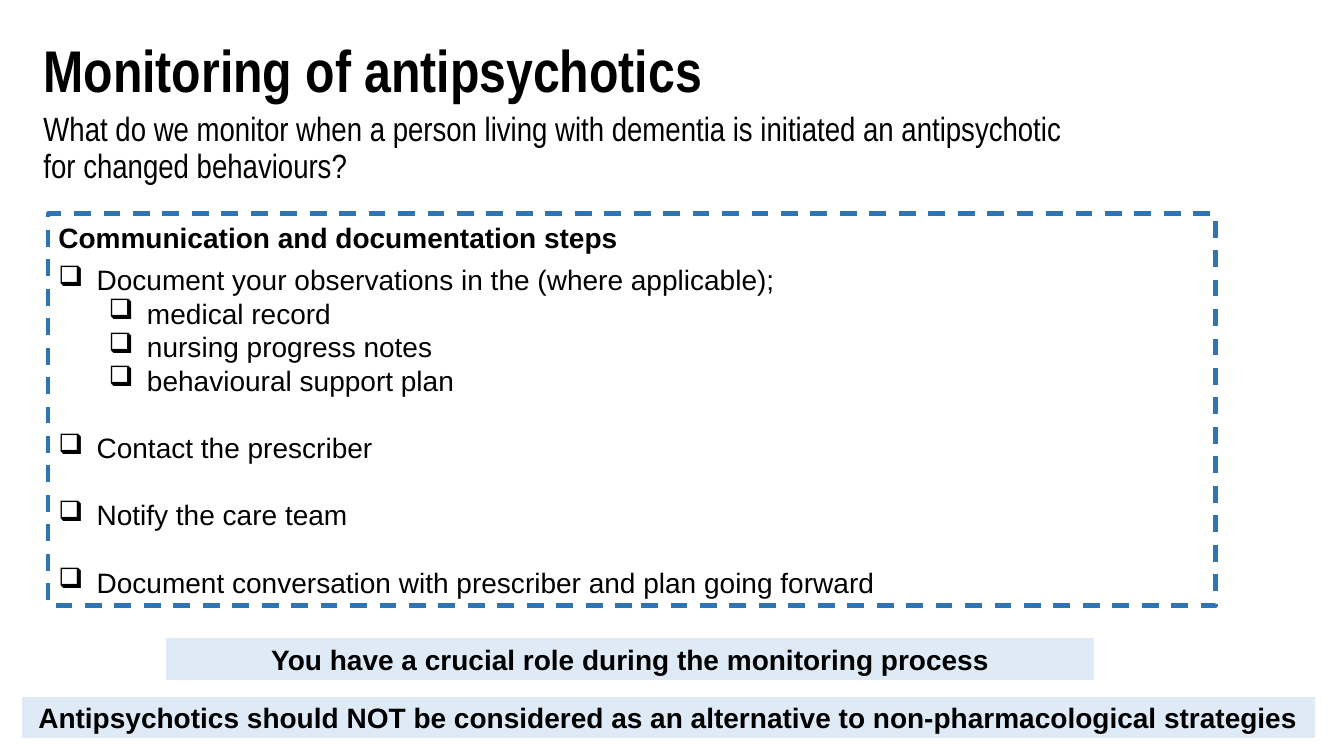
from lxml import etree
from pptx import Presentation
from pptx import util as u
from pptx.dml.color import RGBColor
from pptx.enum import dml, shapes, text
from pptx.oxml import ns

BLACK = RGBColor(0x00, 0x00, 0x00)
WHITE = RGBColor(0xFF, 0xFF, 0xFF)
BLUE = RGBColor(0x2E, 0x75, 0xB6)
PALE_BLUE = RGBColor(0xDE, 0xEB, 0xF7)

WIDTH, HEIGHT = u.Inches(13.33), u.Inches(7.5)
HEADING_FONT, BODY_FONT = "Arial Narrow", "Arial"
BODY_SIZE = 20
LINE_GAP = 24

STEPS = [
    ("Document your observations in the (where applicable);", 0, 6),
    ("medical record", 1, 0),
    ("nursing progress notes", 1, 0),
    ("behavioural support plan", 1, 0),
    ("Contact the prescriber", 0, LINE_GAP),
    ("Notify the care team", 0, LINE_GAP),
    ("Document conversation with prescriber and plan going forward", 0, LINE_GAP),
]


def area(left, top, width, height):
    return [int(share * side / 100) for share, side in
            zip((left, top, width, height), (WIDTH, HEIGHT, WIDTH, HEIGHT))]


def style(p, font, size, bold=False):
    for r in p.runs:
        r.font.name = font
        r.font.size = u.Pt(size)
        r.font.bold = bold
        r.font.color.rgb = BLACK


def add_bullet(p, level):
    p.level = level
    pPr = p._p.get_or_add_pPr()
    pPr.set("marL", str(u.Inches(0.38 + 0.5 * level)))
    pPr.set("indent", str(u.Inches(-0.38)))
    etree.SubElement(pPr, ns.qn("a:buChar"), char="❑")


def add_heading(s, place, words, size, bold=False):
    tf = s.shapes.add_textbox(*area(*place)).text_frame
    tf.word_wrap = True
    tf.text = words
    p = tf.paragraphs[0]
    p.line_spacing = 0.9
    style(p, HEADING_FONT, size, bold)


def add_box(s, place, words, line_color, line_width, align):
    sp = s.shapes.add_shape(shapes.MSO_SHAPE.RECTANGLE, *area(*place))
    sp.shadow.inherit = False
    sp.line.color.rgb = line_color
    sp.line.width = u.Pt(line_width)
    tf = sp.text_frame
    tf.word_wrap = True
    tf.vertical_anchor = text.MSO_ANCHOR.MIDDLE
    tf.text = words
    p = tf.paragraphs[0]
    p.alignment = align
    style(p, BODY_FONT, BODY_SIZE, True)
    return sp


def add_checklist(s, place, title, steps):
    sp = add_box(s, place, title, BLUE, 3, text.PP_ALIGN.LEFT)
    sp.fill.background()
    sp.line.dash_style = dml.MSO_LINE.DASH
    for words, level, gap in steps:
        p = sp.text_frame.add_paragraph()
        p.text = words
        p.alignment = text.PP_ALIGN.LEFT
        p.space_before = u.Pt(gap)
        add_bullet(p, level)
        style(p, BODY_FONT, BODY_SIZE)


def add_banner(s, place, words):
    sp = add_box(s, place, words, WHITE, 2.25, text.PP_ALIGN.CENTER)
    sp.fill.solid()
    sp.fill.fore_color.rgb = PALE_BLUE


def main():
    prs = Presentation()
    prs.slide_width, prs.slide_height = WIDTH, HEIGHT
    s = prs.slides.add_slide(prs.slide_layouts[6])
    add_heading(s, (2.5, 14.25, 79.45, 6.8),
                "What do we monitor when a person living with dementia is "
                "initiated an antipsychotic for changed behaviours?", 24)
    add_heading(s, (2.5, 4.8, 80.85, 10.8), "Monitoring of antipsychotics", 42, True)
    add_checklist(s, (3.6, 28.25, 86.85, 51.85),
                  "Communication and documentation steps", STEPS)
    add_banner(s, (12.25, 84.25, 69.3, 5.85),
               "You have a crucial role during the monitoring process")
    add_banner(s, (1.5, 92, 96.45, 5.85),
               "Antipsychotics should NOT be considered as an alternative to "
               "non-pharmacological strategies")
    prs.save("out.pptx")


if __name__ == "__main__":
    main()
